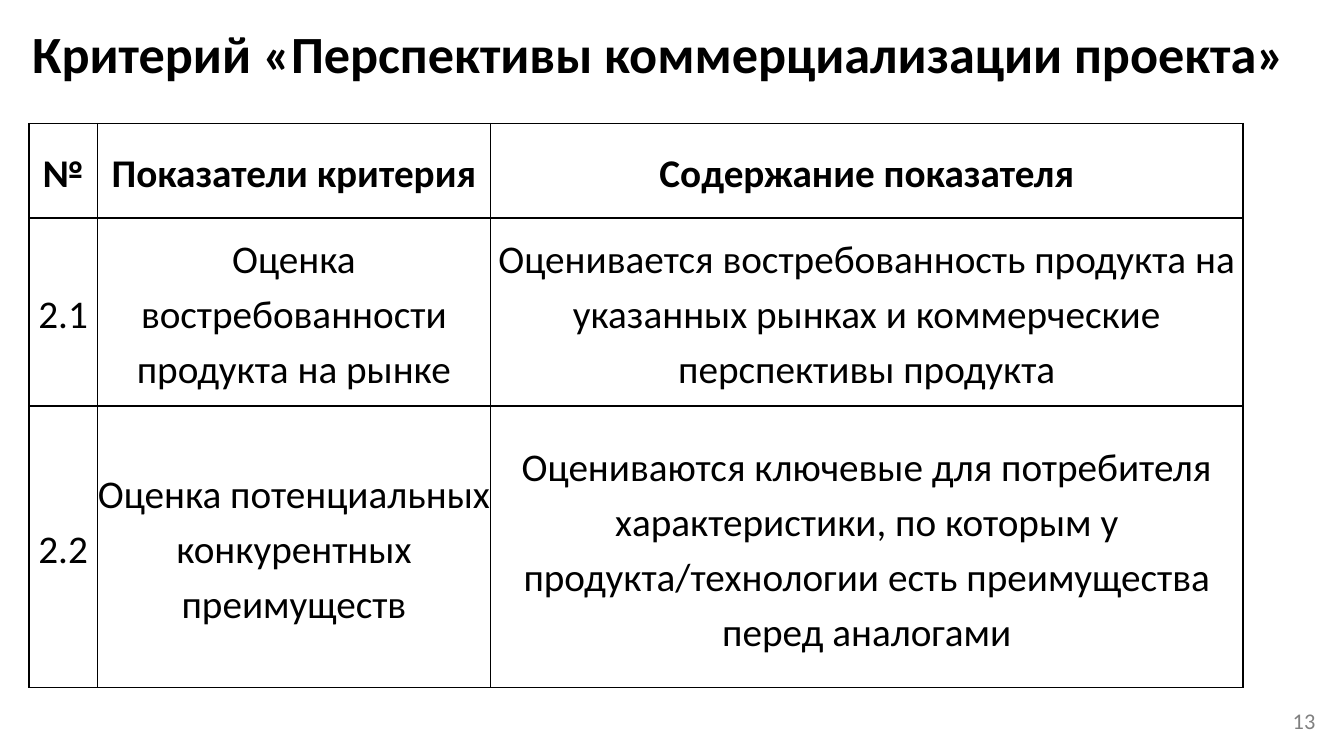
import dataclasses

import lxml.etree
import pptx
import pptx.dml.color
import pptx.enum.text
import pptx.oxml.ns
import pptx.util

SCALE = 4572
ALIGN = pptx.enum.text.PP_ALIGN
MIDDLE = pptx.enum.text.MSO_ANCHOR.MIDDLE


@dataclasses.dataclass
class Label:
    text: str
    box: tuple[int, int, int, int]
    style: dict


@dataclasses.dataclass
class Row:
    height: int
    texts: tuple[str, str, str]
    bold: bool = False


LABELS = [
    Label("Критерий «Перспективы коммерциализации проекта» ", (0, 43, 1976, 70),
          {"size": 28, "bold": True}),
    Label("13", (1433, 1043, 544, 60),
          {"size": 12, "color": "808080", "align": ALIGN.RIGHT}),
]
COLUMNS = [102, 585, 1120]
ROWS = [
    Row(140, ("№", "Показатели критерия", "Содержание показателя"), True),
    Row(280, ("2.1", "Оценка востребованности продукта на рынке",
              "Оценивается востребованность продукта на указанных рынках "
              "и коммерческие перспективы продукта")),
    Row(419, ("2.2", "Оценка потенциальных конкурентных преимуществ",
              "Оцениваются ключевые для потребителя характеристики, по которым "
              "у продукта/технологии есть преимущества перед аналогами")),
]


def px(value: int) -> int:
    return pptx.util.Emu(value * SCALE)


def paint(color: str):
    return pptx.dml.color.RGBColor.from_string(color)


def write(frame, text: str, *, size=21, bold=False, color="000000",
          align=ALIGN.CENTER, spacing=1.0) -> None:
    frame.word_wrap = True
    line = frame.paragraphs[0]
    line.alignment = align
    line.line_spacing = spacing
    run = line.add_run()
    run.text = text
    font = run.font
    font.name = "Calibri"
    font.size = pptx.util.Pt(size)
    font.bold = bold
    font.color.rgb = paint(color)


def draw_label(slide, label: Label) -> None:
    frame = slide.shapes.add_textbox(*map(px, label.box)).text_frame
    frame.vertical_anchor = MIDDLE
    write(frame, label.text, **label.style)


def add_borders(cell, color: str, width: int) -> None:
    props = cell._tc.get_or_add_tcPr()
    name = pptx.oxml.ns.qn
    for place, side in enumerate(("a:lnL", "a:lnR", "a:lnT", "a:lnB")):
        line = lxml.etree.Element(name(side), w=str(pptx.util.Pt(width)))
        fill = lxml.etree.SubElement(line, name("a:solidFill"))
        lxml.etree.SubElement(fill, name("a:srgbClr"), val=color)
        props.insert(place, line)


def draw_cell(cell, text: str, bold: bool) -> None:
    cell.margin_left = cell.margin_right = 0
    cell.margin_top = cell.margin_bottom = 0
    cell.vertical_anchor = MIDDLE
    cell.fill.background()
    add_borders(cell, "000000", 1)
    write(cell.text_frame, text, bold=bold, spacing=1.15)


def draw_table(slide, left: int, top: int) -> None:
    width = sum(COLUMNS)
    height = sum(row.height for row in ROWS)
    table = slide.shapes.add_table(
        len(ROWS), len(COLUMNS), *map(px, (left, top, width, height))).table
    table.first_row = table.horz_banding = False
    for column, size in zip(table.columns, COLUMNS):
        column.width = px(size)
    for line, row in zip(table.rows, ROWS):
        line.height = px(row.height)
        for cell, text in zip(line.cells, row.texts):
            draw_cell(cell, text, row.bold)


def main() -> None:
    deck = pptx.Presentation()
    deck.slide_width, deck.slide_height = px(2000), px(1125)
    slide = deck.slides.add_slide(deck.slide_layouts[6])
    for label in LABELS:
        draw_label(slide, label)
    draw_table(slide, 43, 184)
    deck.save("out.pptx")


if __name__ == "__main__":
    main()
